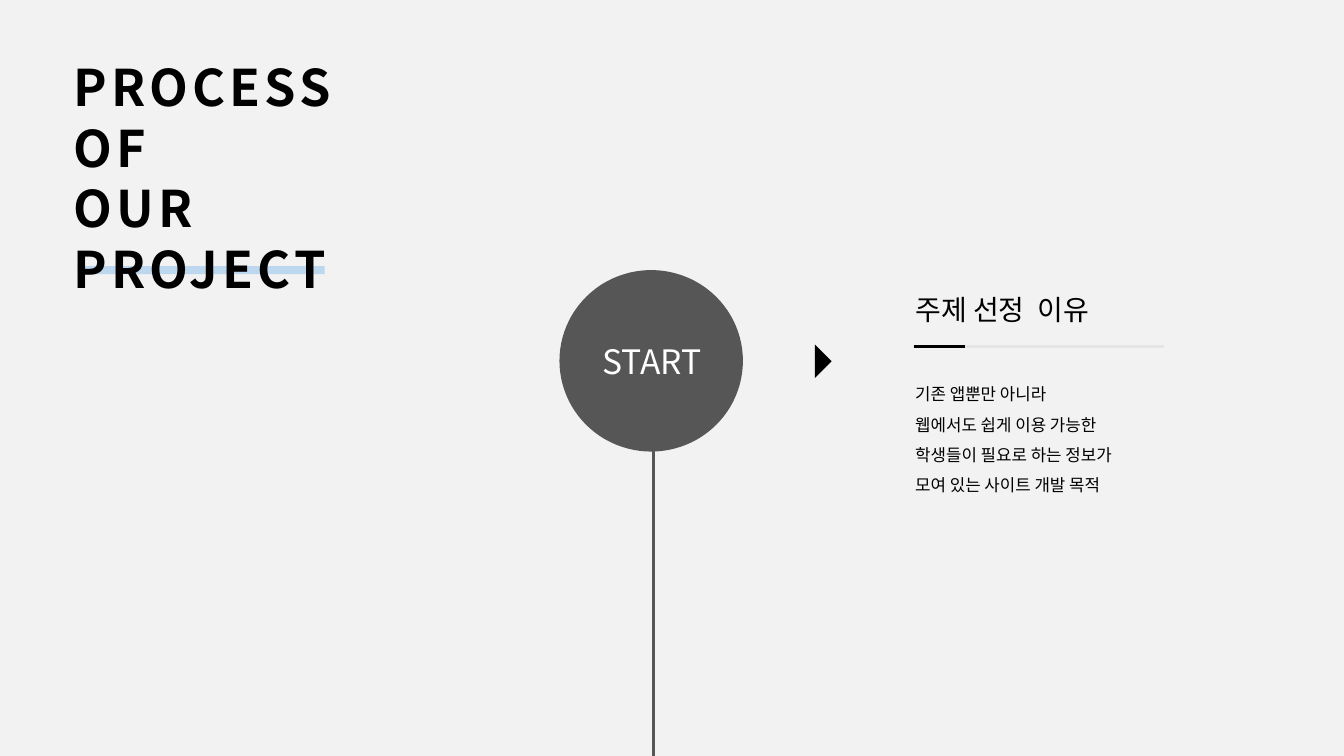
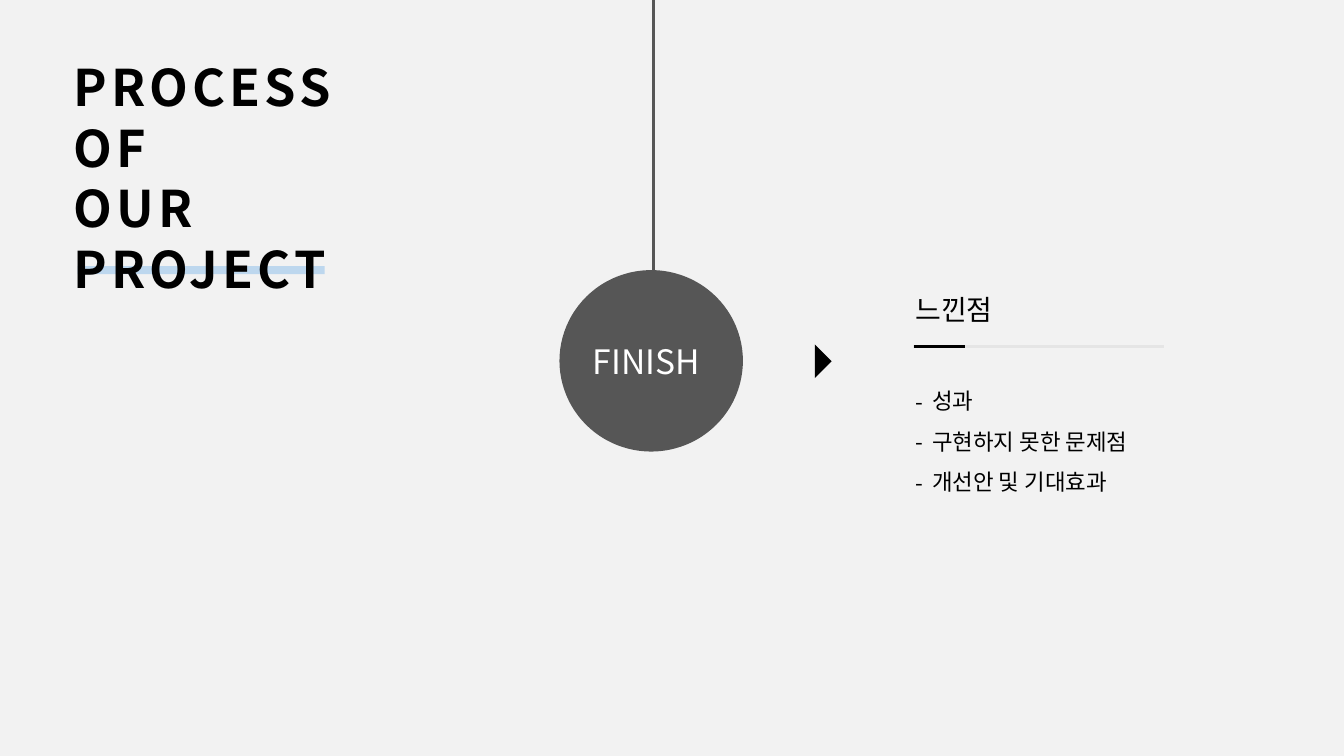
"""Build the start and finish slides of a project process deck."""
from lxml.etree import SubElement
from pptx import Presentation
from pptx.dml.color import RGBColor
from pptx.enum.shapes import MSO_CONNECTOR, MSO_SHAPE
from pptx.enum.text import MSO_ANCHOR, PP_ALIGN
from pptx.oxml.ns import qn
from pptx.util import Inches, Pt

FONT = "Noto Sans CJK KR"
BLACK, WHITE, GREY, PALE, BLUE, BACK = "000000", "FFFFFF", "565656", "E5E5E5", "BDD7EE", "F2F2F2"
COLS, ROWS = 160, 90
MID, RULE, TEXT = 77.76, 41.28, 108.48
TITLE = ["PROCESS", "OF", "OUR", "PROJECT"]

prs = Presentation()
prs.slide_width, prs.slide_height = Inches(13.333), Inches(7.5)
CELL = prs.slide_width / COLS


def paint(fmt, color):
    """Fill a shape, background or line format with one solid hex colour."""
    fmt.fill.solid()
    fmt.fill.fore_color.rgb = RGBColor.from_string(color)


def write(s, box, lines, size, color=BLACK, frame={}, para={}, bold=False, spc=0, bullet=0):
    """Place lines of text in a box measured in grid cells."""
    tf = s.shapes.add_textbox(*(round(v * CELL) for v in box)).text_frame
    for key, value in {"word_wrap": True, **frame}.items():
        setattr(tf, key, value)
    for i, line in enumerate(lines):
        p = tf.paragraphs[0] if i == 0 else tf.add_paragraph()
        for key, value in para.items():
            setattr(p, key, value)
        if bullet:
            pPr = p._p.get_or_add_pPr()
            pPr.set("marL", str(round(bullet * CELL)))
            pPr.set("indent", str(-round(bullet * CELL)))
            SubElement(pPr, qn("a:buFont"), typeface=FONT)
            SubElement(pPr, qn("a:buChar"), char="-")
        r = p.add_run()
        r.text = line
        for key, value in {"size": Pt(size), "bold": bold, "name": FONT}.items():
            setattr(r.font, key, value)
        r.font.color.rgb = RGBColor.from_string(color)
        SubElement(r._r.rPr, qn("a:ea"), typeface=FONT)
        if spc:
            r._r.rPr.set("spc", str(spc * 100))


inset = round(0.48 * CELL)
tight = {f"margin_{side}": inset for side in ("left", "top", "right", "bottom")}
middle = {**tight, "vertical_anchor": MSO_ANCHOR.MIDDLE}

paint(prs.slide_master.background, BACK)

slides = [
    {"label": "START", "label_box": (70.68, 40.08, 13.92, 5.88), "stem": (42.36, ROWS),
     "heading": "주제 선정  이유", "size": 12, "bullet": 0,
     "body": ["기존 앱뿐만 아니라", "웹에서도 쉽게 이용 가능한",
              "학생들이 필요로 하는 정보가", "모여 있는 사이트 개발 목적"]},
    {"label": "FINISH", "label_box": (69, 40.08, 15.84, 5.88), "stem": (0, 48.84),
     "heading": "느낀점", "size": 16, "bullet": 2.04,
     "body": ["성과", "구현하지 못한 문제점", "개선안 및 기대효과"]},
]

for item in slides:
    s = prs.slides.add_slide(prs.slide_layouts[6])
    top, bottom = item["stem"]

    lines = [
        (MID, top, MID, bottom, GREY),
        (108.72, RULE, 138.6, RULE, PALE),
        (108.84, RULE, 114.84, RULE, BLACK),
    ]
    for *ends, color in lines:
        line = s.shapes.add_connector(MSO_CONNECTOR.STRAIGHT, *(round(v * CELL) for v in ends))
        line.line.width = Pt(2)
        paint(line.line, color)
        SubElement(line._element.spPr, qn("a:effectLst"))

    arrow = s.shapes.build_freeform(96.72, RULE, scale=CELL)
    arrow.add_line_segments([(98.64, RULE + 1.92), (96.72, RULE + 3.84)], close=True)
    shapes = [
        (s.shapes.add_shape(kind, *(round(v * CELL) for v in box)), color)
        for kind, box, color in [
            (MSO_SHAPE.RECTANGLE, (9.24, 31.68, 29.4, 0.96), BLUE),
            (MSO_SHAPE.OVAL, (66.6, 32.16, 21.84, 21.6), GREY),
        ]
    ]
    for shape, color in shapes + [(arrow.convert_to_shape(), BLACK)]:
        paint(shape, color)
        shape.line.fill.background()
        shape.shadow.inherit = False

    write(s, item["label_box"], [item["label"]], 24, WHITE, middle, {"alignment": PP_ALIGN.CENTER})
    write(s, (TEXT, 34.32, 33.24, 5.52), [item["heading"]], 20, frame=tight)
    write(s, (TEXT, 44.04, 32.28, 15.96), item["body"], item["size"], frame=tight,
          para={"line_spacing": 1.5}, bullet=item["bullet"])
    write(s, (7.56, 6.12, 61.92, 30.24), TITLE, 36, bold=True, spc=3)

prs.save("out.pptx")
